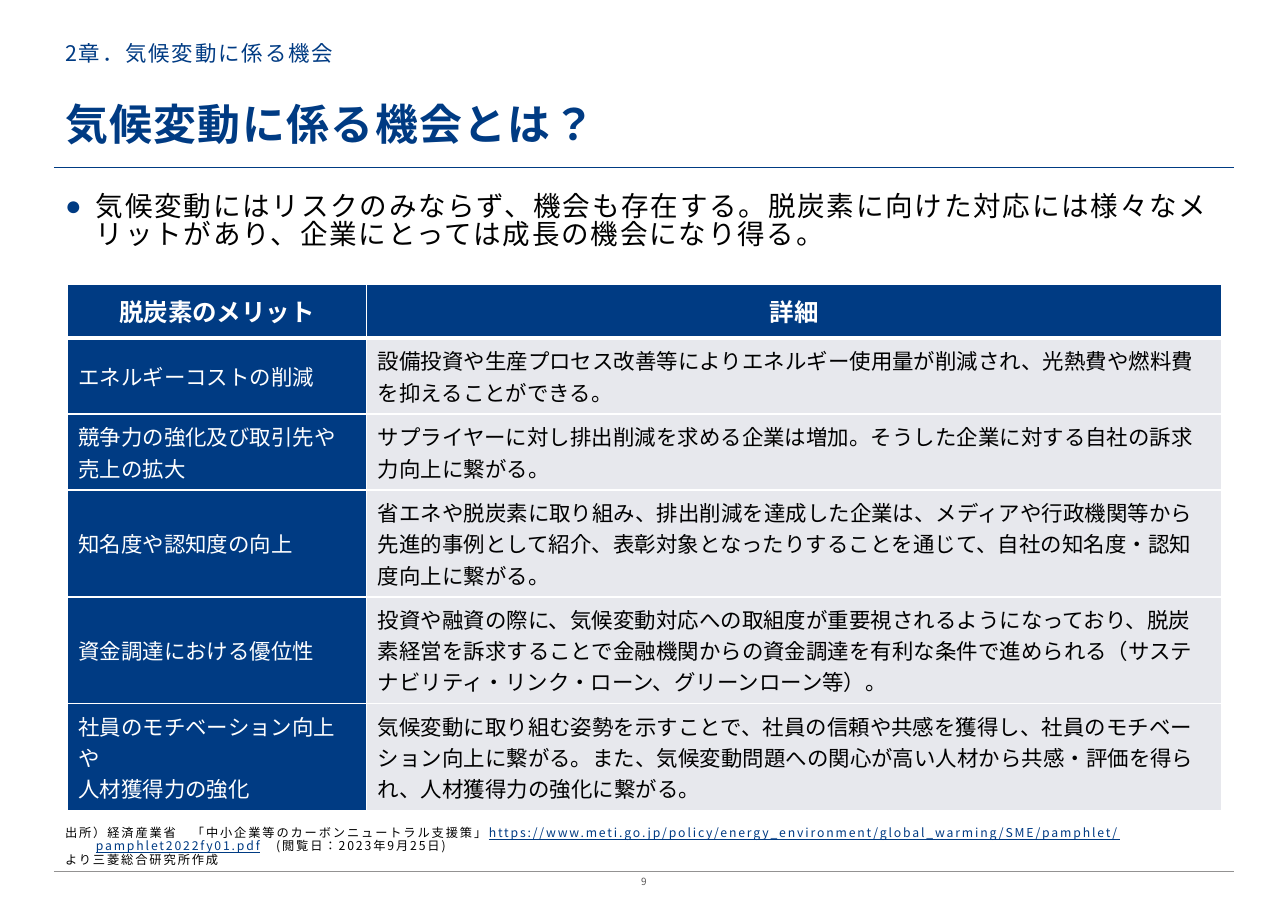
from dataclasses import dataclass

from lxml.etree import SubElement
from pptx import Presentation
from pptx.dml.color import RGBColor
from pptx.enum.lang import MSO_LANGUAGE_ID
from pptx.enum.shapes import MSO_CONNECTOR
from pptx.enum.text import MSO_ANCHOR, MSO_AUTO_SIZE, PP_ALIGN
from pptx.oxml.ns import qn
from pptx.util import Emu, Pt

PX = 9144  # one px is a hundredth of an inch
FONT = "Noto Sans CJK JP"
HANGING = 28
COLORS = {
    "navy": "003B83",
    "black": "000000",
    "white": "FFFFFF",
    "pale": "E7E8ED",
    "gray": "939292",
    "folio": "595757",
}


@dataclass(frozen=True)
class Style:
    size: float
    color: str
    bold: bool = False
    underline: bool = False
    tracking: int = 0


@dataclass(frozen=True)
class Area:
    left: int
    top: int
    width: int
    height: int

    def emu(self) -> list[Emu]:
        return [px(v) for v in (self.left, self.top, self.width, self.height)]


@dataclass(frozen=True)
class Rule:
    top: int
    color: str
    weight: float


@dataclass(frozen=True)
class Merit:
    name: tuple[str, ...]
    detail: str
    height: int


CHAPTER = Style(14, "navy", tracking=120)
HEADLINE = Style(28, "navy", bold=True, tracking=100)
MESSAGE = Style(18, "black", tracking=120)
SOURCE = Style(8, "black", tracking=120)
SOURCE_URL = Style(8, "navy", underline=True, tracking=120)
FOLIO = Style(6.5, "folio")
HEADER = Style(16, "white", bold=True)
MERIT_NAME = Style(14, "white")
MERIT_DETAIL = Style(14, "black")

RULES = [Rule(791, "gray", 0.35), Rule(152, "navy", 0.6)]
COLUMN_WIDTHS = (272, 776)
HEADER_HEIGHT = 49
HEADERS = ("脱炭素のメリット", "詳細")
MERITS = [
    Merit(("エネルギーコストの削減",),
          "設備投資や生産プロセス改善等によりエネルギー使用量が削減され、光熱費や燃料費を抑えることができる。", 69),
    Merit(("競争力の強化及び取引先や", "売上の拡大"),
          "サプライヤーに対し排出削減を求める企業は増加。そうした企業に対する自社の訴求力向上に繋がる。", 69),
    Merit(("知名度や認知度の向上",),
          "省エネや脱炭素に取り組み、排出削減を達成した企業は、メディアや行政機関等から先進的事例として紹介、"
          "表彰対象となったりすることを通じて、自社の知名度・認知度向上に繋がる。", 97),
    Merit(("資金調達における優位性",),
          "投資や融資の際に、気候変動対応への取組度が重要視されるようになっており、脱炭素経営を訴求することで"
          "金融機関からの資金調達を有利な条件で進められる（サステナビリティ・リンク・ローン、グリーンローン等）。", 97),
    Merit(("社員のモチベーション向上や", "人材獲得力の強化"),
          "気候変動に取り組む姿勢を示すことで、社員の信頼や共感を獲得し、社員のモチベーション向上に繋がる。"
          "また、気候変動問題への関心が高い人材から共感・評価を得られ、人材獲得力の強化に繋がる。", 97),
]


def px(value: int) -> Emu:
    return Emu(value * PX)


def rgb(name: str) -> RGBColor:
    return RGBColor.from_string(COLORS[name])


def add_span(para, text: str, style: Style) -> None:
    span = para.add_run()
    span.text = text
    font = span.font
    font.name = FONT
    font.size = Pt(style.size)
    font.bold = style.bold
    font.underline = style.underline
    font.color.rgb = rgb(style.color)
    font.language_id = MSO_LANGUAGE_ID.JAPANESE
    properties = span._r.get_or_add_rPr()
    properties.set("spc", str(style.tracking))
    SubElement(properties, qn("a:ea"), typeface=FONT)


def prepare_frame(box, area: Area, anchor: MSO_ANCHOR = MSO_ANCHOR.TOP):
    """Place a text shape, clear its insets and return its text frame."""
    box.left, box.top, box.width, box.height = area.emu()
    frame = box.text_frame
    frame.margin_left = frame.margin_top = frame.margin_right = frame.margin_bottom = 0
    frame.word_wrap = True
    frame.auto_size = MSO_AUTO_SIZE.NONE
    frame.vertical_anchor = anchor
    return frame


def format_para(para, line_spacing: float, align: PP_ALIGN = PP_ALIGN.LEFT) -> None:
    para.alignment = align
    para.line_spacing = line_spacing
    para.space_before = Pt(0)


def hang_para(para) -> None:
    properties = para._p.get_or_add_pPr()
    properties.set("marL", str(px(HANGING)))
    properties.set("indent", str(-px(HANGING)))


def add_bullet(para) -> None:
    properties = para._p.get_or_add_pPr()
    color = SubElement(properties, qn("a:buClr"))
    SubElement(color, qn("a:srgbClr"), val=COLORS["navy"])
    SubElement(properties, qn("a:buChar"), char="●")


def add_rule(page, rule: Rule) -> None:
    line = page.shapes.add_connector(
        MSO_CONNECTOR.STRAIGHT, px(49), px(rule.top), px(1120), px(rule.top))
    line.line.color.rgb = rgb(rule.color)
    line.line.width = Pt(rule.weight)
    SubElement(line._element.spPr, qn("a:effectLst"))


def add_source(page) -> None:
    box = page.shapes.add_textbox(0, 0, 0, 0)
    frame = prepare_frame(box, Area(59, 743, 1051, 44), MSO_ANCHOR.BOTTOM)
    lines = [
        [("出所）経済産業省　「中小企業等のカーボンニュートラル支援策」", SOURCE),
         ("https://www.meti.go.jp/policy/energy_environment/global_warming/SME/pamphlet/pamphlet2022fy01.pdf",
          SOURCE_URL),
         ("　(閲覧日：2023年9月25日)", SOURCE)],
        [("より三菱総合研究所作成", SOURCE)],
    ]
    for index, spans in enumerate(lines):
        para = frame.add_paragraph() if index else frame.paragraphs[0]
        format_para(para, 0.92)
        hang_para(para)
        for text, style in spans:
            add_span(para, text, style)


def fill_cell(cell, lines: tuple[str, ...], style: Style, fill: str,
              align: PP_ALIGN = PP_ALIGN.LEFT, bottom_weight: float = 1) -> None:
    properties = cell._tc.get_or_add_tcPr()
    for side, weight in (("L", 1), ("R", 1), ("T", 1), ("B", bottom_weight)):
        border = SubElement(properties, qn(f"a:ln{side}"), w=str(Pt(weight)))
        solid = SubElement(border, qn("a:solidFill"))
        SubElement(solid, qn("a:srgbClr"), val=COLORS["white"])
    cell.fill.solid()
    cell.fill.fore_color.rgb = rgb(fill)
    cell.vertical_anchor = MSO_ANCHOR.MIDDLE
    frame = cell.text_frame
    for index, text in enumerate(lines):
        para = frame.add_paragraph() if index else frame.paragraphs[0]
        para.alignment = align
        add_span(para, text, style)


def add_merit_table(page) -> None:
    heights = [HEADER_HEIGHT] + [merit.height for merit in MERITS]
    area = Area(61, 258, sum(COLUMN_WIDTHS), sum(heights))
    table = page.shapes.add_table(len(heights), len(COLUMN_WIDTHS), *area.emu()).table
    for column, width in zip(table.columns, COLUMN_WIDTHS):
        column.width = px(width)
    for row, height in zip(table.rows, heights):
        row.height = px(height)
    for index, text in enumerate(HEADERS):
        fill_cell(table.cell(0, index), (text,), HEADER, "navy", PP_ALIGN.CENTER, 3)
    for index, merit in enumerate(MERITS, start=1):
        fill_cell(table.cell(index, 0), merit.name, MERIT_NAME, "navy")
        fill_cell(table.cell(index, 1), (merit.detail,), MERIT_DETAIL, "pale")


def main() -> None:
    deck = Presentation()
    deck.slide_width, deck.slide_height = px(1169), px(827)
    page = deck.slides.add_slide(deck.slide_layouts[1])
    for rule in RULES:
        add_rule(page, rule)

    chapter = prepare_frame(page.shapes.title, Area(59, 40, 1008, 24)).paragraphs[0]
    format_para(chapter, 0.83)
    add_span(chapter, "2章．気候変動に係る機会", CHAPTER)

    message = prepare_frame(page.placeholders[1], Area(59, 177, 1051, 61)).paragraphs[0]
    add_bullet(message)
    hang_para(message)
    format_para(message, 0.83)
    message.space_after = Pt(6)
    add_span(message, "気候変動にはリスクのみならず、機会も存在する。脱炭素に向けた対応には"
             "様々なメリットがあり、企業にとっては成長の機会になり得る。", MESSAGE)

    headline_box = page.shapes.add_textbox(0, 0, 0, 0)
    headline = prepare_frame(headline_box, Area(59, 80, 1008, 56), MSO_ANCHOR.BOTTOM).paragraphs[0]
    format_para(headline, 0.92)
    add_span(headline, "気候変動に係る機会とは？", HEADLINE)

    folio_box = page.shapes.add_textbox(0, 0, 0, 0)
    folio = prepare_frame(folio_box, Area(545, 797, 79, 12)).paragraphs[0]
    format_para(folio, 0.83, PP_ALIGN.CENTER)
    add_span(folio, "9", FOLIO)

    add_merit_table(page)
    add_source(page)
    deck.save("out.pptx")


if __name__ == "__main__":
    main()
